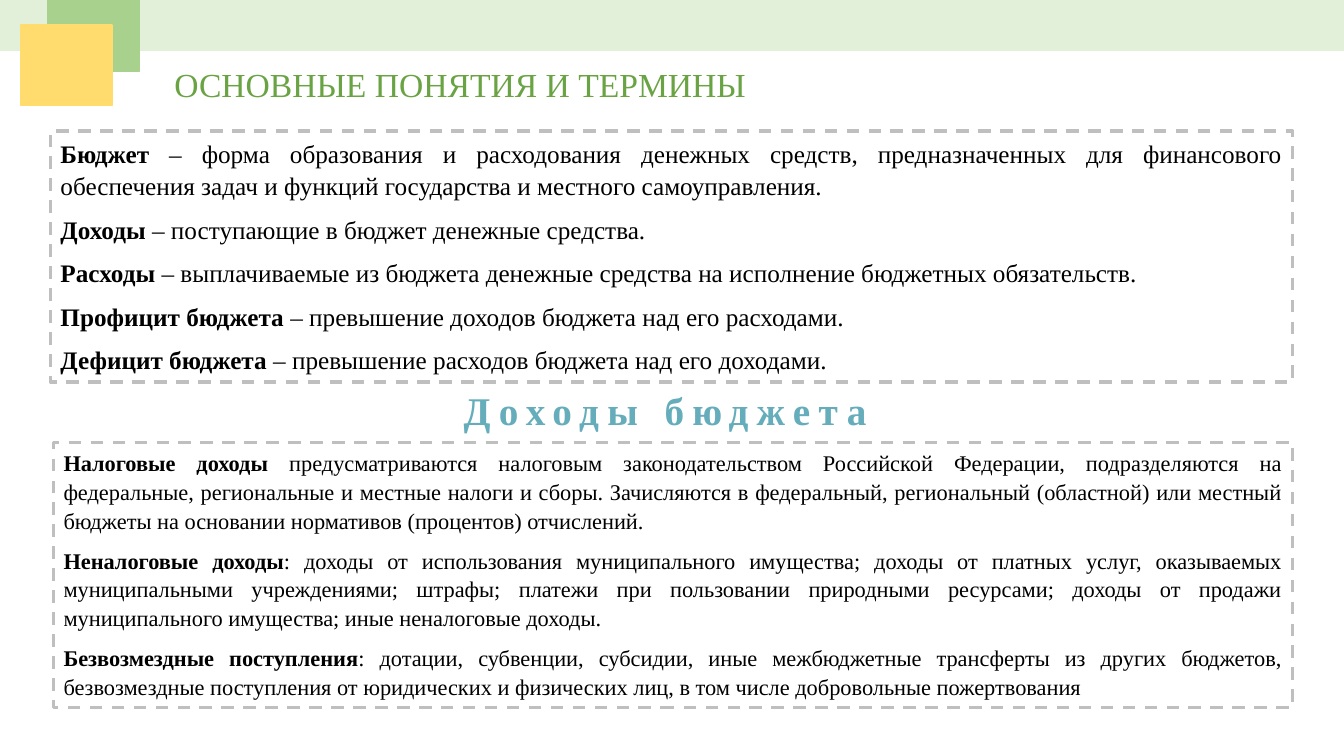
from pptx import Presentation
from pptx.dml.color import RGBColor
from pptx.enum.dml import MSO_LINE
from pptx.enum.shapes import MSO_SHAPE
from pptx.enum.text import MSO_ANCHOR, MSO_AUTO_SIZE, PP_ALIGN
from pptx.oxml.ns import qn
from pptx.util import Inches, Pt
from lxml.etree import SubElement

FONT = "Times New Roman"
WIDTH, HEIGHT = 13.33, 7.5
COLORS = {
    "band": "E2F0D9", "green": "A9D18E", "yellow": "FFDC6D", "title": "6AA343",
    "heading": "65ADBB", "frame": "BFBFBF", "text": "000000", "white": "FFFFFF",
}


def color(name):
    return RGBColor.from_string(COLORS[name])


def style(para, size, color_name, bold=None):
    para.font.name, para.font.size = FONT, Pt(size)
    para.font.bold = bold
    para.font.color.rgb = color(color_name)


deck = Presentation()
deck.slide_width, deck.slide_height = Inches(WIDTH), Inches(HEIGHT)
page = deck.slides.add_slide(deck.slide_layouts.get_by_name("Two Content"))
title, terms_box, income_box = page.placeholders

# Framed lists of definitions: term in bold, then its explanation
terms = [
    ("Бюджет", " – форма образования и расходования денежных средств, предназначенных "
     "для финансового обеспечения задач и функций государства и местного самоуправления."),
    ("Доходы", " – поступающие в бюджет денежные средства."),
    ("Расходы", " – выплачиваемые из бюджета денежные средства "
     "на исполнение бюджетных обязательств."),
    ("Профицит бюджета", " – превышение доходов бюджета над его расходами."),
    ("Дефицит бюджета", " – превышение расходов бюджета над его доходами."),
]
income = [
    ("Налоговые доходы", " предусматриваются налоговым законодательством Российской Федерации, "
     "подразделяются на федеральные, региональные и местные налоги и сборы. Зачисляются "
     "в федеральный, региональный (областной) или местный бюджеты на основании нормативов "
     "(процентов) отчислений."),
    ("Неналоговые доходы", ": доходы от использования муниципального имущества; доходы "
     "от платных услуг, оказываемых муниципальными учреждениями; штрафы; платежи "
     "при пользовании природными ресурсами; доходы от продажи муниципального имущества; "
     "иные неналоговые доходы."),
    ("Безвозмездные поступления", ": дотации, субвенции, субсидии, иные межбюджетные "
     "трансферты из других бюджетов, безвозмездные поступления от юридических и физических "
     "лиц, в том числе добровольные пожертвования"),
]
for box, items, size, left, top, height in [
    (terms_box, terms, 18, 0.5, 1.3, 2.49),
    (income_box, income, 16, 0.53, 4.39, 2.63),
]:
    box.left, box.top = Inches(left), Inches(top)
    box.width, box.height = Inches(WIDTH - 0.51 - left), Inches(height)
    box.line.color.rgb = color("frame")
    box.line.width = Pt(2.25)
    box.line.dash_style = MSO_LINE.DASH
    frame = box.text_frame
    frame.auto_size = MSO_AUTO_SIZE.NONE
    frame.vertical_anchor = MSO_ANCHOR.TOP
    for index, (term, meaning) in enumerate(items):
        para = frame.add_paragraph() if index else frame.paragraphs[0]
        para.alignment = PP_ALIGN.JUSTIFY
        para.line_spacing = 1.07
        para.space_before, para.space_after = Pt(0), Pt(8)
        style(para, size, "text")
        span = para.add_run()
        span.text, span.font.bold = term, True
        para.add_run().text = meaning
        # No bullet and no hanging indent
        properties = para._p.get_or_add_pPr()
        properties.set("marL", "0")
        properties.set("indent", "0")
        bullet = SubElement(properties, qn("a:buNone"))
        properties.find(qn("a:defRPr")).addprevious(bullet)
income_box.fill.solid()
income_box.fill.fore_color.rgb = color("white")

# Title and the heading between the frames
heading = page.shapes.add_textbox(0, 0, 0, 0)
for box, text, size, color_name, bold, area in [
    (title, "ОСНОВНЫЕ ПОНЯТИЯ И ТЕРМИНЫ", 24, "title", False, (1.63, 0.58, 5.93, 0.5)),
    (heading, "Доходы бюджета", 28, "heading", True, (4.5, 3.78, 4.32, 0.57)),
]:
    box.left, box.top, box.width, box.height = map(Inches, area)
    frame = box.text_frame
    frame.text = text
    frame.word_wrap = False
    frame.auto_size = MSO_AUTO_SIZE.NONE
    frame.vertical_anchor = MSO_ANCHOR.MIDDLE
    frame.paragraphs[0].alignment = PP_ALIGN.LEFT
    style(frame.paragraphs[0], size, color_name, bold)
heading.text_frame.paragraphs[0].runs[0].font._element.set("spc", "600")

# Top band and the two corner blocks
for color_name, area in [
    ("band", (0, 0, WIDTH, 0.5)),
    ("green", (0.47, 0, 0.91, 0.71)),
    ("yellow", (0.21, 0.25, 0.9, 0.8)),
]:
    block = page.shapes.add_shape(MSO_SHAPE.RECTANGLE, *map(Inches, area))
    block.shadow.inherit = False
    block.fill.solid()
    block.fill.fore_color.rgb = color(color_name)
    block.line.color.rgb = color(color_name)
    block.line.width = Pt(1)

deck.save("out.pptx")
